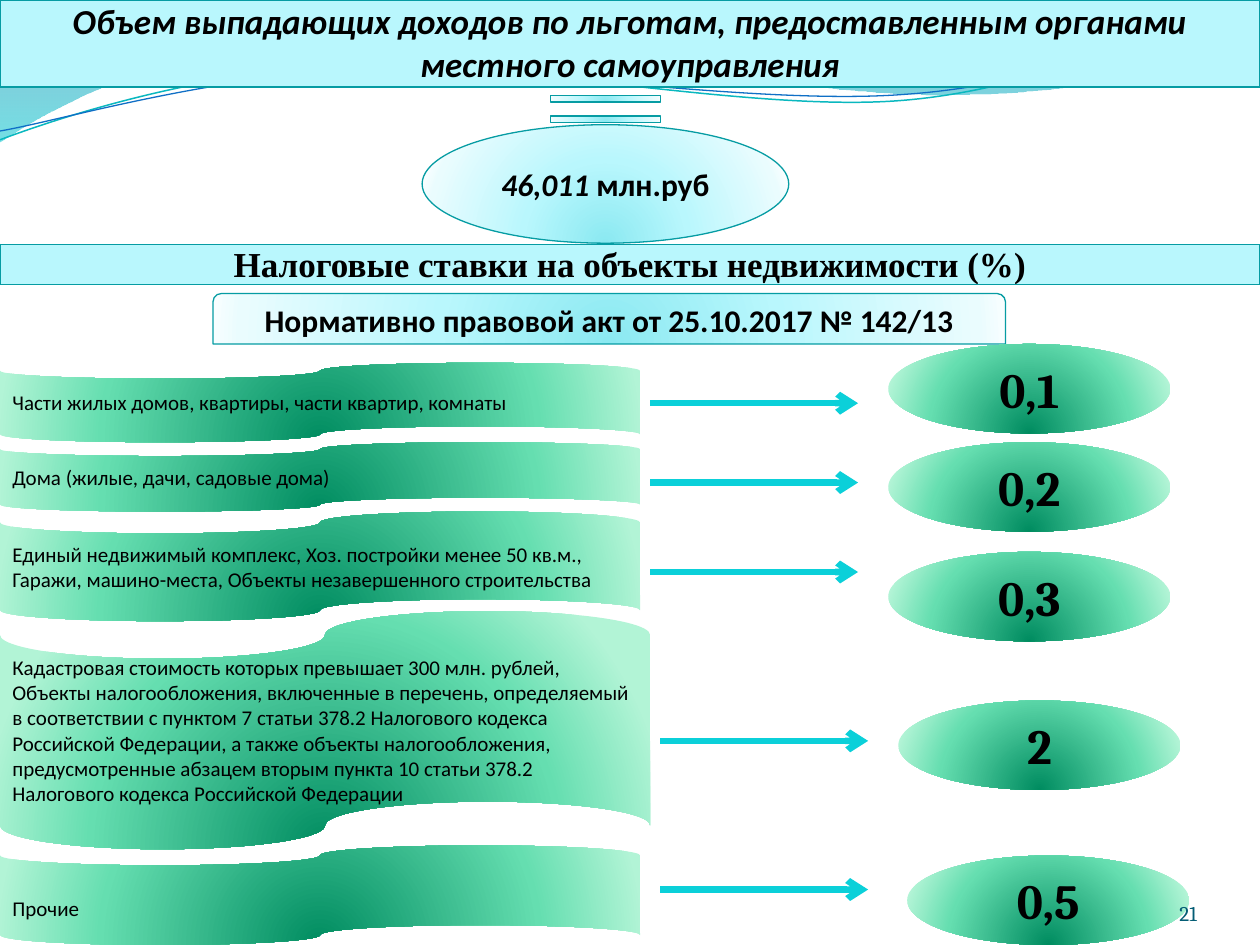
import pptx
import pptx.dml.color
import pptx.enum.shapes
import pptx.enum.text
import pptx.oxml
import pptx.oxml.ns
import pptx.util
from pptx.util import Inches

COLORS = {
    "black": "000000", "pale": "B9F7FD", "edge": "069CA3", "arrow": "0BD0D9",
    "page": "045D75", "teal": "0AB8BF", "blue": "0F6FC6",
}
# Gradient stops: position, colour, opacity (all but colour in percent)
AQUA = [(0, "8BE9F1", 100), (43, "B9F7FD", 100), (93, "EAFCFE", 100), (100, "F8FEFF", 100)]
GREEN = [(0, "008C60", 100), (68, "65DEB0", 100), (100, "B2F4D6", 100)]
DEEP = [(0, "0074A1", 45), (100, "00C6CF", 55)]
SOFT = [(0, "00A1A9", 30), (80, "008BBF", 45)]
GLOW = ('<a:path path="circle"><a:fillToRect l="50000" t="130000" '
        'r="50000" b="-30000"/></a:path>')
DOWN = '<a:lin ang="5400000" scaled="0"/>'

# Each step is a line (x, y) or a cubic curve (x1, y1, x2, y2, x, y)
BANDS = [
    ((0, 0), [(4.4, -0.01), (4.76, 0.17, 6.64, 0.63, 7.58, 0.63),
              (8.53, 0.63, 9.58, 0.26, 10, 0.09), (10.01, 0.36),
              (9.83, 0.44, 8.7, 0.76, 7.46, 0.75), (6.22, 0.75, 3.82, 0.28, 2.57, 0.34),
              (1.29, 0.36, 0.46, 0.83, -0.01, 1.13), (0, 0)], DEEP),
    ((4.79, -0.01), [(5.09, 0.11, 6.82, 0.62, 7.69, 0.65),
                     (8.56, 0.69, 9.61, 0.32, 10, 0.21), (10, 0), (4.79, -0.01)], SOFT),
]
CURVES = [
    ((0, 1.11), [(0.48, 0.93, 1.58, 0.57, 2.77, 0.52), (3.95, 0.47, 5.93, 0.89, 7.13, 0.8),
                 (8.33, 0.71, 9.38, 0.15, 9.98, -0.02)], "teal", 0.85),
    ((0, 1.04), [(0.47, 0.96, 1.64, 0.61, 2.83, 0.56), (4.03, 0.51, 5.97, 0.84, 7.17, 0.75),
                 (8.36, 0.67, 9.41, 0.21, 10, 0.06)], "blue", 0.75),
]

# Paragraphs, tape top, width, height, arrow x and y, rate, oval x and y
RATES = [
    (["Части жилых домов, квартиры, части квартир, комнаты"],
     2.88, 5.08, 0.63, 5.16, 3.2, "0,1", 7.05, 2.73),
    (["Дома (жилые, дачи, садовые дома)"],
     3.51, 5.08, 0.55, 5.16, 3.83, "0,2", 7.05, 3.51),
    (["Единый недвижимый комплекс, Хоз. постройки менее 50 кв.м., Гаражи, "
      "машино-места, Объекты незавершенного строительства"],
     4.06, 5.08, 0.87, 5.16, 4.54, "0,3", 7.05, 4.38),
    (["Кадастровая стоимость которых превышает 300 млн. рублей,",
      "Объекты налогообложения, включенные в перечень, определяемый в соответствии "
      "с пунктом 7 статьи 378.2 Налогового кодекса Российской Федерации, а также "
      "объекты налогообложения, предусмотренные абзацем вторым пункта 10 статьи 378.2 "
      "Налогового кодекса Российской Федерации"],
     4.85, 5.16, 1.89, 5.24, 5.88, "2", 7.13, 5.56),
    (["Прочие"], 6.71, 5.08, 0.79, 5.24, 7.06, "0,5", 7.2, 6.79),
]

KINDS = pptx.enum.shapes.MSO_SHAPE
ALIGN = pptx.enum.text.PP_ALIGN
ANCHOR = pptx.enum.text.MSO_ANCHOR
qn = pptx.oxml.ns.qn


def rgb(name):
    return pptx.dml.color.RGBColor.from_string(COLORS[name])


def make(xml):
    """Parse an XML fragment in the drawing namespace."""
    head, rest = xml.split(">", 1)
    slash = "/" if head.endswith("/") else ""
    return pptx.oxml.parse_xml(
        f"{head.rstrip('/')} {pptx.oxml.ns.nsdecls('a')}{slash}>{rest}")


def shade(shape, stops, way):
    shape.fill.solid()
    props = shape._element.spPr
    marks = ""
    for pos, color, alpha in stops:
        clear = f'<a:alpha val="{alpha * 1000}"/>' if alpha < 100 else ""
        marks += (f'<a:gs pos="{pos * 1000}"><a:srgbClr val="{color}">'
                  f'{clear}</a:srgbClr></a:gs>')
    grad = make(f'<a:gradFill rotWithShape="1"><a:gsLst>{marks}</a:gsLst>{way}</a:gradFill>')
    props.replace(props.find(qn("a:solidFill")), grad)


def stroke(shape, color, width):
    shape.line.color.rgb = rgb(color)
    shape.line.width = pptx.util.Pt(width)


def style(font, size, face, bold=False, italic=False, color="black"):
    font.size = pptx.util.Pt(size)
    font.name = face
    font.bold = bold
    font.italic = italic
    font.color.rgb = rgb(color)


def write(frame, texts, size, face, align=ALIGN.CENTER, **looks):
    frame.word_wrap = True
    for i, text in enumerate(texts):
        para = frame.paragraphs[0] if i == 0 else frame.add_paragraph()
        para.text = text
        para.alignment = align
        style(para.font, size, face, **looks)


def outline(slide, start, steps, close):
    """Build a freeform, then join the three points of each curve into a cubic."""
    pen = slide.shapes.build_freeform(*map(Inches, start))
    points = [(Inches(x), Inches(y)) for step in steps
              for x, y in zip(step[::2], step[1::2])]
    pen.add_line_segments(points, close=close)
    shape = pen.convert_to_shape()
    shape.shadow.inherit = False
    lines = iter(list(shape._element.iter(qn("a:lnTo"))))
    for step in steps:
        line = next(lines)
        if len(step) == 6:
            cubic = make("<a:cubicBezTo/>")
            line.addprevious(cubic)
            for part in (line, next(lines), next(lines)):
                cubic.append(part[0])
                part.getparent().remove(part)
    return shape


def waves(slide):
    for start, steps, stops in BANDS:
        band = outline(slide, start, steps, True)
        shade(band, stops, DOWN)
        band.line.fill.background()
    for start, steps, color, width in CURVES:
        curve = outline(slide, start, steps, False)
        curve.fill.background()
        stroke(curve, color, width)


def banner(slide, top, height, text, face, italic=False):
    frame = slide.shapes.add_table(1, 1, 0, Inches(top), Inches(10), Inches(height))
    frame.table.rows[0].height = Inches(0.11)
    frame.height = Inches(height)
    cell = frame.table.cell(0, 0)
    cell.margin_left = cell.margin_right = cell.margin_top = Inches(0.01)
    cell.margin_bottom = 0
    write(cell.text_frame, [text], 20, face, bold=True, italic=italic)
    cell.fill.solid()
    cell.fill.fore_color.rgb = rgb("pale")
    props = cell._tc.get_or_add_tcPr()
    for i, side in enumerate("LRTB"):
        props.insert(i, make(f'<a:ln{side} w="9525"><a:solidFill><a:srgbClr '
                             f'val="{COLORS["edge"]}"/></a:solidFill></a:ln{side}>'))


def block(slide, kind, box, stops, edge=None):
    shape = slide.shapes.add_shape(kind, *map(Inches, box))
    shape.shadow.inherit = False
    shade(shape, stops, GLOW)
    if edge:
        stroke(shape, edge, 0.75)
    else:
        shape.line.fill.background()
    shape.text_frame.vertical_anchor = ANCHOR.MIDDLE
    return shape


def arrow(slide, left, top):
    line = slide.shapes.add_connector(
        pptx.enum.shapes.MSO_CONNECTOR.STRAIGHT,
        Inches(left), Inches(top), Inches(left + 1.65), Inches(top))
    stroke(line, "arrow", 3.75)
    line.line._get_or_add_ln().append(make('<a:tailEnd type="arrow"/>'))
    line._element.spPr.append(make("<a:effectLst/>"))


def total(slide):
    oval = block(slide, KINDS.OVAL, (3.35, 0.99, 2.91, 0.94), AQUA, "edge")
    write(oval.text_frame, ["46,011"], 18, "Calibri", bold=True, italic=True)
    unit = oval.text_frame.paragraphs[0].add_run()
    unit.text = " млн.руб"
    unit.font.italic = False
    for top in (0.76, 0.92):
        block(slide, KINDS.RECTANGLE, (4.37, top, 0.87, 0.05), AQUA, "edge")


def rates(slide):
    for texts, top, width, height, *_ in RATES:
        tape = block(slide, KINDS.FLOWCHART_PUNCHED_TAPE, (0, top, width, height), GREEN)
        write(tape.text_frame, texts, 12, "Calibri", ALIGN.LEFT)
    tape.text_frame.margin_top = Inches(0.25)
    for *_, left, top, _, _, _ in RATES:
        arrow(slide, left, top)
    for *_, rate, x, y in RATES:
        oval = block(slide, KINDS.OVAL, (x, y, 2.24, 0.71), GREEN)
        write(oval.text_frame, [rate], 28, "Cambria", bold=True)


def number(slide):
    frame = slide.shapes.add_textbox(*map(Inches, (8.67, 6.95, 0.83, 0.4))).text_frame
    frame.margin_left = frame.margin_right = frame.margin_top = frame.margin_bottom = 0
    frame.vertical_anchor = ANCHOR.BOTTOM
    write(frame, ["21"], 12, "Cambria", ALIGN.RIGHT, color="page")


def main():
    deck = pptx.Presentation()
    deck.slide_width, deck.slide_height = Inches(10), Inches(7.5)
    slide = deck.slides.add_slide(deck.slide_layouts[6])
    waves(slide)
    banner(slide, 0, 0.67, "Объем выпадающих доходов по льготам, предоставленным "
           "органами местного самоуправления", "Calibri", italic=True)
    total(slide)
    banner(slide, 1.94, 0.34, "Налоговые ставки на объекты недвижимости (%)",
           "Times New Roman")
    act = block(slide, KINDS.ROUND_2_SAME_RECTANGLE, (1.69, 2.33, 6.29, 0.4), AQUA, "edge")
    write(act.text_frame, ["Нормативно правовой акт от 25.10.2017 № 142/13"],
          18, "Calibri", bold=True)
    rates(slide)
    number(slide)
    deck.save("out.pptx")


if __name__ == "__main__":
    main()
